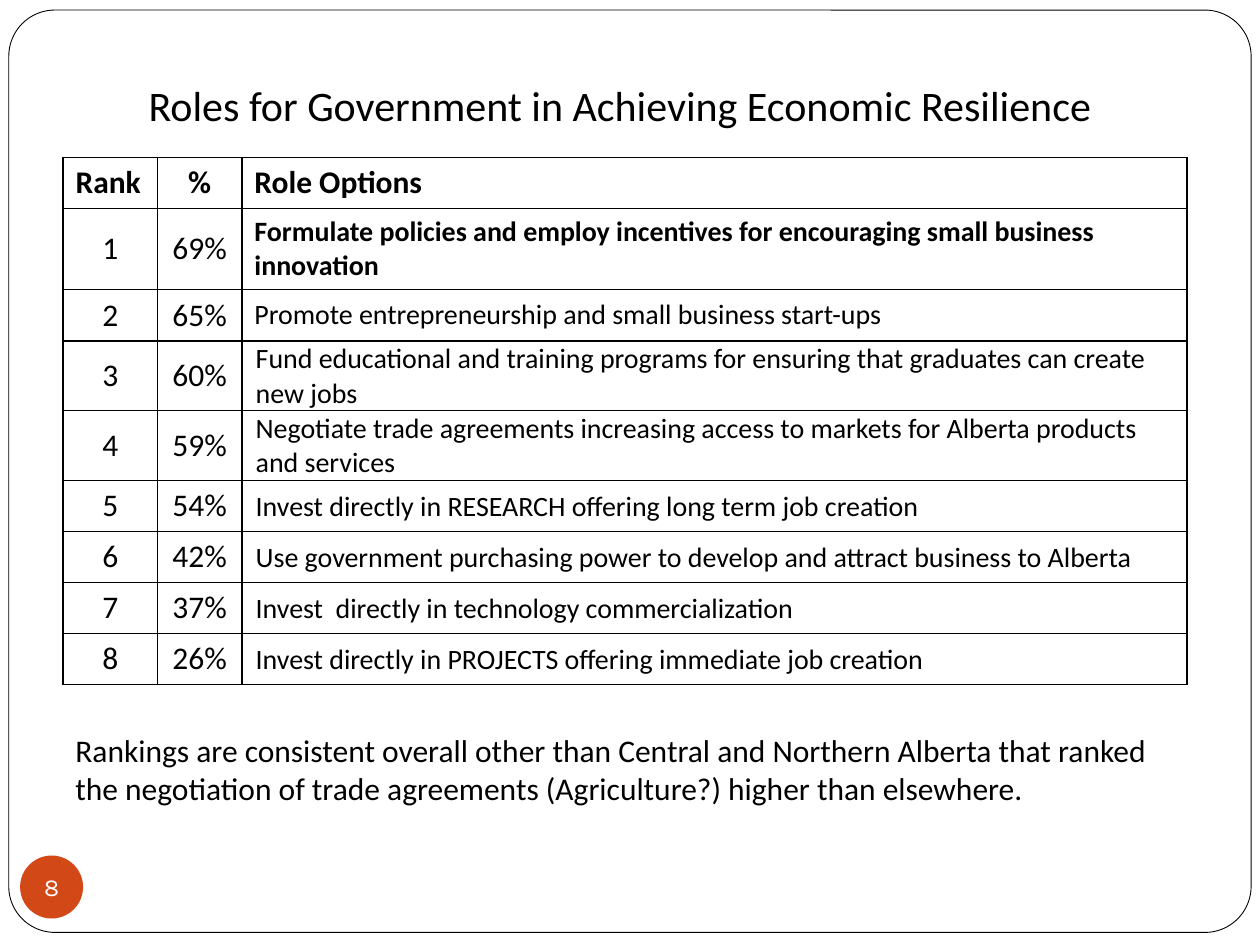
from dataclasses import dataclass

import pptx
import pptx.dml.color
import pptx.enum.shapes
import pptx.enum.text
import pptx.oxml
import pptx.oxml.ns
import pptx.util
from lxml import etree

BLACK = pptx.dml.color.RGBColor(0x00, 0x00, 0x00)
WHITE = pptx.dml.color.RGBColor(0xFF, 0xFF, 0xFF)
ORANGE = pptx.dml.color.RGBColor(0xD3, 0x48, 0x17)
BODY_FONT = "Calibri"
NUMBER_FONT = "Karla"

SLIDE_WIDTH = pptx.util.Inches(10)
SLIDE_HEIGHT = pptx.util.Inches(7.5)
GRID_COLUMNS, GRID_ROWS = 100, 75

LEFT = pptx.enum.text.PP_ALIGN.LEFT
CENTER = pptx.enum.text.PP_ALIGN.CENTER
MIDDLE = pptx.enum.text.MSO_ANCHOR.MIDDLE
TOP = pptx.enum.text.MSO_ANCHOR.TOP
SHAPES = pptx.enum.shapes.MSO_SHAPE


@dataclass(frozen=True)
class Area:
    """A rectangle in columns and rows of the slide grid."""

    column: float
    row: float
    columns: float
    rows: float

    def box(self) -> tuple[int, int, int, int]:
        return across(self.column), down(self.row), across(self.columns), down(self.rows)


@dataclass(frozen=True)
class Role:
    percent: int
    lines: tuple[str, ...]
    rows: float = 4
    bold: bool = False
    inset: bool = True


ROLES = (
    Role(69, ("Formulate policies and employ incentives for encouraging small business innovation",),
         rows=6.4, bold=True, inset=False),
    Role(65, ("Promote entrepreneurship and small business start-ups",), inset=False),
    Role(60, ("Fund educational and training programs for ensuring that graduates can create",
              "new jobs"), rows=5.5),
    Role(59, ("Negotiate trade agreements increasing access to markets for Alberta products",
              "and services"), rows=5.5),
    Role(54, ("Invest directly in RESEARCH offering long term job creation",)),
    Role(42, ("Use government purchasing power to develop and attract business to Alberta",)),
    Role(37, ("Invest  directly in technology commercialization",)),
    Role(26, ("Invest directly in PROJECTS offering immediate job creation",)),
)
HEADER_ROWS = 4
TABLE_COLUMNS = (7.5, 6.7, 75)
TABLE = Area(5, 12.5, sum(TABLE_COLUMNS), HEADER_ROWS + sum(role.rows for role in ROLES))


def across(columns: float) -> int:
    return round(SLIDE_WIDTH * columns / GRID_COLUMNS)


def down(rows: float) -> int:
    return round(SLIDE_HEIGHT * rows / GRID_ROWS)


def write(frame, lines: tuple[str, ...], size: float, align=LEFT, bold: bool = False,
          color=BLACK, font: str = BODY_FONT) -> None:
    frame.text = "\n".join(lines)
    for paragraph in frame.paragraphs:
        paragraph.alignment = align
        paragraph.font.name = font
        paragraph.font.size = pptx.util.Pt(size)
        paragraph.font.bold = bold
        paragraph.font.color.rgb = color


def add_figure(slide, kind, area: Area, fill):
    figure = slide.shapes.add_shape(kind, *area.box())
    figure.shadow.inherit = False
    figure.fill.solid()
    figure.fill.fore_color.rgb = fill
    return figure


def add_text(slide, area: Area, text: str, size: float, align=LEFT) -> None:
    frame = slide.shapes.add_textbox(*area.box()).text_frame
    frame.word_wrap = True
    write(frame, (text,), size, align)


def add_page_number(slide, number: int) -> None:
    badge = add_figure(slide, SHAPES.OVAL, Area(1.6, 67.9, 5, 5), ORANGE)
    badge.line.fill.background()
    frame = badge.text_frame
    frame.margin_left = frame.margin_right = frame.margin_top = frame.margin_bottom = 0
    frame.word_wrap = False
    frame.vertical_anchor = MIDDLE
    write(frame, (str(number),), 14, CENTER, color=WHITE, font=NUMBER_FONT)


def style_cell(cell, anchor) -> None:
    """Clear the fill and draw a thin border on all four sides."""
    cell.vertical_anchor = anchor
    properties = cell._tc.get_or_add_tcPr()
    for side in ("a:lnL", "a:lnR", "a:lnT", "a:lnB"):
        border = etree.SubElement(properties, pptx.oxml.ns.qn(side), w=str(pptx.util.Pt(1)))
        fill = etree.SubElement(border, pptx.oxml.ns.qn("a:solidFill"))
        etree.SubElement(fill, pptx.oxml.ns.qn("a:srgbClr"), val=str(BLACK))
    cell.fill.background()


def add_ranking(slide) -> None:
    table = slide.shapes.add_table(len(ROLES) + 1, len(TABLE_COLUMNS), *TABLE.box()).table
    table.first_row = table.horz_banding = False
    for column, width in zip(table.columns, TABLE_COLUMNS):
        column.width = across(width)

    table.rows[0].height = down(HEADER_ROWS)
    headings = (("Rank", LEFT), ("%", CENTER), ("Role Options", LEFT))
    for cell, (heading, align) in zip(table.rows[0].cells, headings):
        style_cell(cell, TOP)
        write(cell.text_frame, (heading,), 18, align, bold=True)

    for rank, role in enumerate(ROLES, start=1):
        row = table.rows[rank]
        row.height = down(role.rows)
        rank_cell, percent_cell, role_cell = row.cells
        for cell in row.cells:
            style_cell(cell, MIDDLE)
        write(rank_cell.text_frame, (str(rank),), 18, CENTER)
        write(percent_cell.text_frame, (f"{role.percent}%",), 18, CENTER)
        write(role_cell.text_frame, role.lines, 16, bold=role.bold)
        if role.inset:
            role_cell.margin_left = across(1.1)
            role_cell.margin_right = role_cell.margin_top = across(0.1)
            role_cell.margin_bottom = 0


def main() -> None:
    deck = pptx.Presentation()
    deck.slide_width, deck.slide_height = SLIDE_WIDTH, SLIDE_HEIGHT
    slide = deck.slides.add_slide(deck.slide_layouts[6])

    frame = add_figure(slide, SHAPES.ROUNDED_RECTANGLE, Area(0.7, 0.8, 98.6, 73.2), WHITE)
    frame.adjustments[0] = 0.05
    frame.line.color.rgb = BLACK
    frame.line.width = pptx.util.Pt(0.5)

    add_page_number(slide, 8)
    add_ranking(slide)
    add_text(slide, Area(7.2, 5.8, 84, 5),
             "Roles for Government in Achieving Economic Resilience", 24, CENTER)
    add_text(slide, Area(TABLE.column, 57.5, TABLE.columns, 7.1),
             "Rankings are consistent overall other than Central and Northern Alberta that ranked "
             "the negotiation of trade agreements (Agriculture?) higher than elsewhere.", 18)
    deck.save("out.pptx")


if __name__ == "__main__":
    main()
